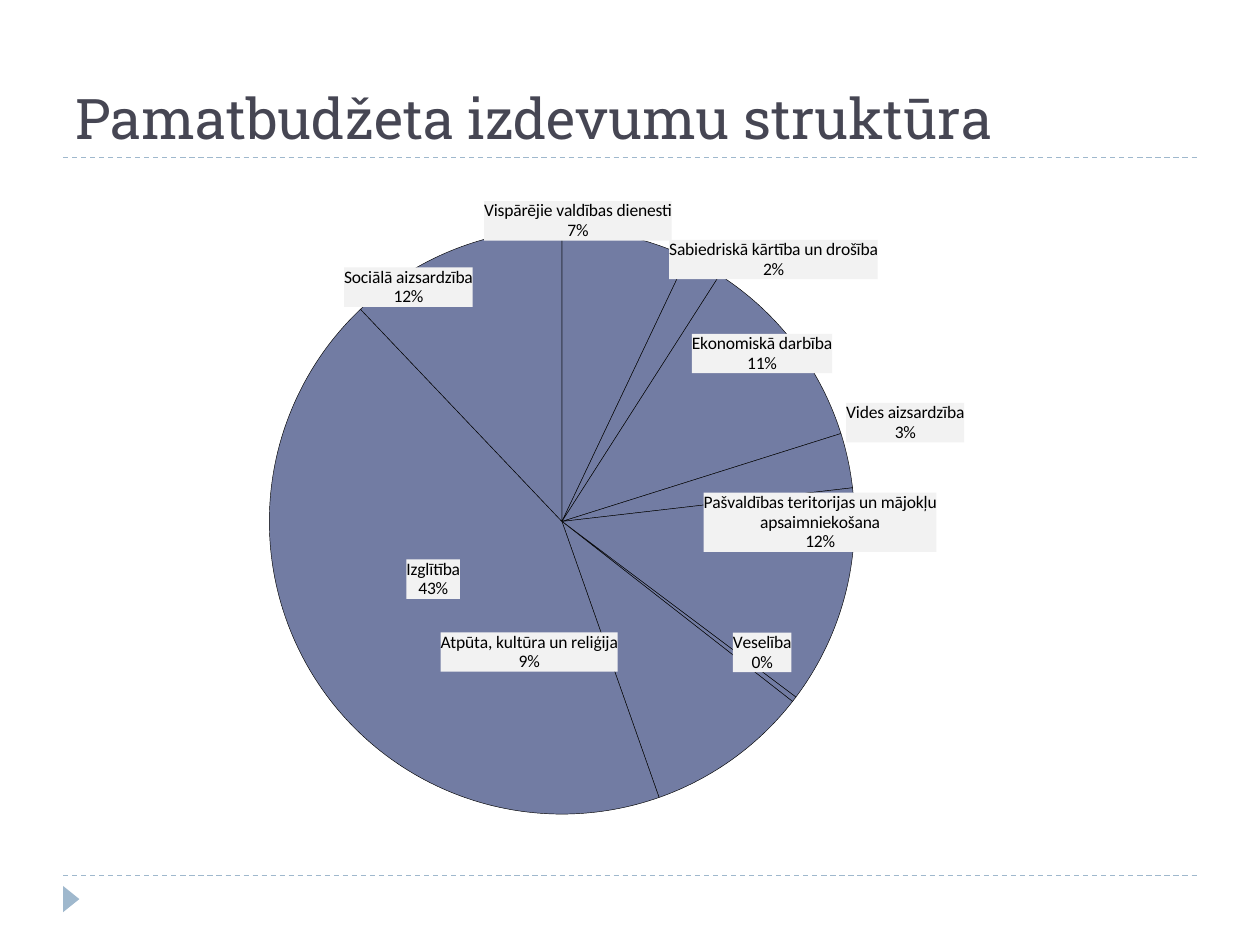
from copy import deepcopy

from pptx import Presentation
from pptx.chart.data import CategoryChartData
from pptx.dml.color import RGBColor
from pptx.enum.chart import XL_CHART_TYPE as ChartType, XL_LABEL_POSITION as LabelPosition
from pptx.enum.dml import MSO_LINE as LineStyle
from pptx.enum.shapes import MSO_CONNECTOR as Connector, MSO_SHAPE as Shape
from pptx.enum.text import MSO_ANCHOR as Anchor
from pptx.oxml import parse_xml
from pptx.oxml.ns import nsdecls, qn
from pptx.util import Cm, Pt


def color(value):
    return RGBColor.from_string(value)


presentation = Presentation()
presentation.slide_width, presentation.slide_height = Cm(25.4), Cm(19.05)
slide = presentation.slides.add_slide(presentation.slide_layouts[6])
shapes = slide.shapes

# Dashed rules under the title and above the footer
for rule_top in (17.65, 3.18):
    rule = shapes.add_connector(Connector.STRAIGHT, Cm(1.27), Cm(rule_top), Cm(24.13), Cm(rule_top))
    rule.line.color.rgb = color("9FB8CD")
    rule.line.width = Pt(0.75)
    rule.line.dash_style = LineStyle.DASH
    rule._element.spPr.append(parse_xml(f"<a:effectLst {nsdecls('a')}/>"))

# Footer arrow
arrow = shapes.add_shape(Shape.ISOSCELES_TRIANGLE, Cm(1.17), Cm(17.96), Cm(0.53), Cm(0.33))
arrow.rotation = 90
arrow.shadow.inherit = False
arrow.fill.solid()
arrow.fill.fore_color.rgb = color("9FB8CD")
arrow.line.fill.background()

# Title
title = shapes.add_textbox(Cm(1.27), Cm(0.43), Cm(22.86), Cm(2.74))
title.text_frame.word_wrap = True
title.text_frame.vertical_anchor = Anchor.BOTTOM
paragraph = title.text_frame.paragraphs[0]
paragraph.text = "Pamatbudžeta izdevumu struktūra"
paragraph.font.name = "Roboto Slab"
paragraph.font.size = Pt(32)
paragraph.font.color.rgb = color("464653")

# Expenses: category, percent, label shift right and down in cm
expenses = [
    ("Vispārējie valdības dienesti", 7, 0.95, -0.85),
    ("Sabiedriskā kārtība un drošība", 2, 3.58, -0.65),
    ("Ekonomiskā darbība", 11, 0.88, -0.29),
    ("Vides aizsardzība", 3, 2.49, -1.19),
    ("Pašvaldības teritorijas un mājokļu apsaimniekošana", 12, 2, -0.89),
    ("Veselība", 0.3, 0.06, -0.46),
    ("Atpūta, kultūra un reliģija", 9, -2.23, -1.64),
    ("Izglītība", 43, 1.77, -1.44),
    ("Sociālā aizsardzība", 12, -2.26, 0.22),
]
wrapped_index = 4
chart_data = CategoryChartData()
chart_data.categories = [expense[0] for expense in expenses]
chart_data.add_series("Series 1", [expense[1] for expense in expenses])

# Pie chart
chart_width, chart_height = 22.86, 13.72
chart = shapes.add_chart(ChartType.PIE, Cm(1.27), Cm(3.38), Cm(chart_width), Cm(chart_height),
                         chart_data).chart
chart.has_title = False
chart.has_legend = False
chart.font.name = "Calibri"
chart.font.size = Pt(10)
chart.font.color.rgb = color("000000")
plot = chart.plots[0]
plot.vary_by_categories = True
series = plot.series[0]
for index in range(len(expenses)):
    slice_format = series.points[index].format
    slice_format.fill.solid()
    slice_format.fill.fore_color.rgb = color("727CA3")
    slice_format.line.color.rgb = color("000000")
    slice_format.line.width = Pt(0.25)

# Plot area within the chart
plot_area = chart._chartSpace.chart.plotArea
for old_layout in plot_area.findall(qn("c:layout")):
    plot_area.remove(old_layout)
plot_area.insert(0, parse_xml(
    f'<c:layout {nsdecls("c")}><c:manualLayout><c:layoutTarget val="inner"/>'
    '<c:xMode val="edge"/><c:yMode val="edge"/><c:x val="0.18"/><c:y val="0.09"/>'
    '<c:w val="0.52"/><c:h val="0.86"/></c:manualLayout></c:layout>'))

# Label style shared by all slices
labels = series.data_labels
labels.show_category_name = True
labels.show_percentage = True
labels.show_value = False
labels.number_format = "0%"
labels.number_format_is_linked = False
labels.position = LabelPosition.INSIDE_END
labels.font.name = "Calibri"
labels.font.size = Pt(10)
labels.font.color.rgb = color("000000")
label_list = labels._element
label_list.find(qn("c:txPr")).addprevious(parse_xml(
    f'<c:spPr {nsdecls("c", "a")}><a:solidFill><a:srgbClr val="F2F2F2"/></a:solidFill>'
    '<a:ln><a:noFill/></a:ln></c:spPr>'))
for leader_lines in label_list.findall(qn("c:showLeaderLines")):
    label_list.remove(leader_lines)
label_list.append(parse_xml(f'<c:separator {nsdecls("c")}>\n</c:separator>'))
label_style = list(label_list)

# One shifted label for each slice
for index, (category, percent, right, down) in enumerate(expenses):
    label = parse_xml(
        f'<c:dLbl {nsdecls("c")}><c:idx val="{index}"/><c:layout><c:manualLayout>'
        f'<c:x val="{right / chart_width:.4f}"/><c:y val="{down / chart_height:.4f}"/>'
        '</c:manualLayout></c:layout></c:dLbl>')
    for part in label_style:
        label.append(deepcopy(part))
    if index == wrapped_index:  # narrower box, so that the name breaks after "un"
        label.append(parse_xml(
            f'<c:extLst {nsdecls("c")}><c:ext uri="{{CE6537A1-D6FC-4f65-9D91-7224C49458BB}}" '
            'xmlns:c15="http://schemas.microsoft.com/office/drawing/2012/chart">'
            '<c15:layout><c:manualLayout><c:w val="0.16"/><c:h val="0.09"/>'
            '</c:manualLayout></c15:layout></c:ext></c:extLst>'))
    label_list.insert(index, label)
label_list.append(parse_xml(f'<c:showLeaderLines {nsdecls("c")} val="0"/>'))

presentation.save("out.pptx")
